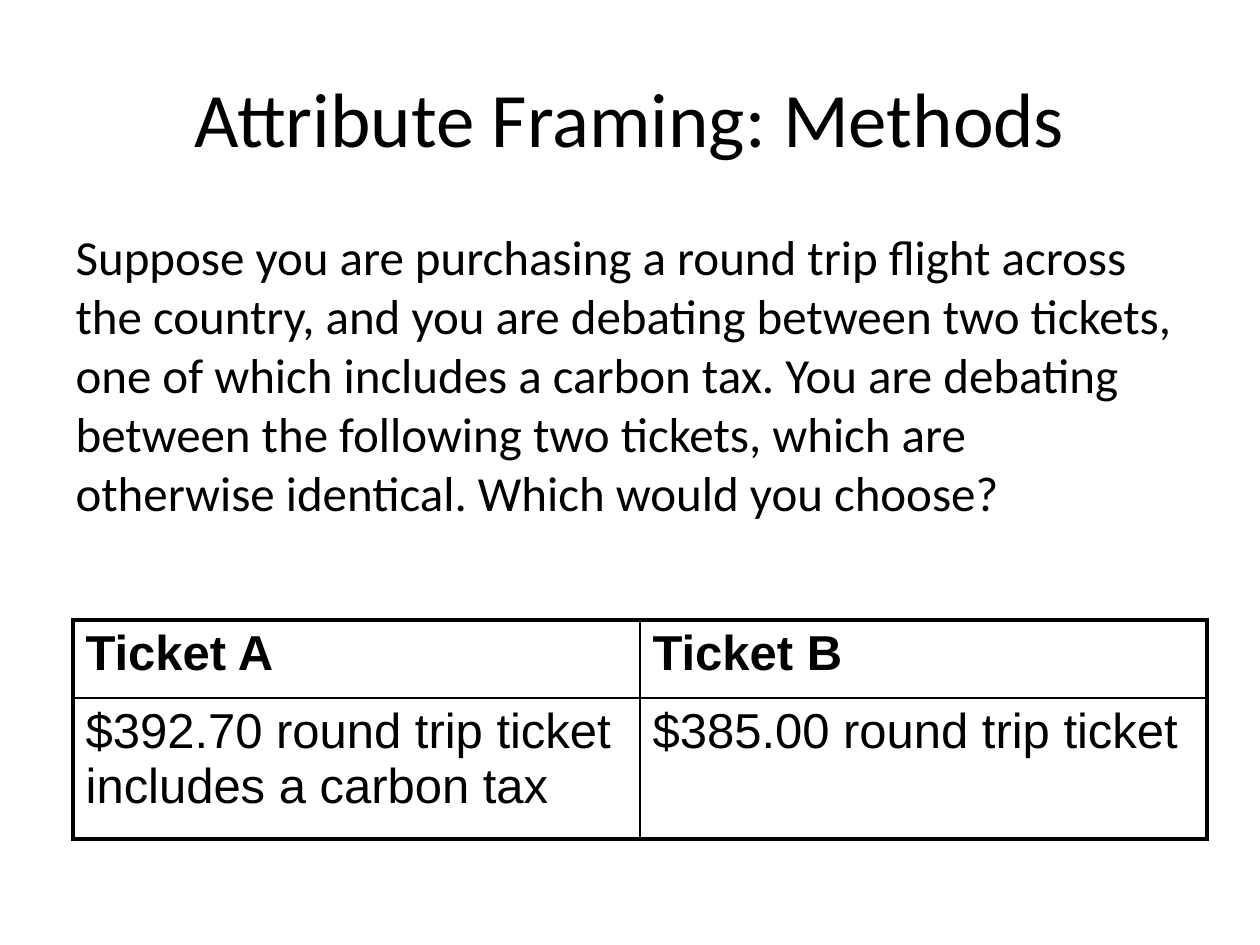
from dataclasses import dataclass

import pptx
import pptx.dml.color
import pptx.enum.text
import pptx.oxml
import pptx.oxml.ns
import pptx.util
from pptx.util import Pt


@dataclass(frozen=True)
class Theme:
    ink: str = "000000"
    heading_font: str = "Calibri"
    table_font: str = "Arial"
    title_size: float = 44
    text_size: float = 28
    space_before: float = 5.6
    outer_border: float = 2.25
    inner_border: float = 1


@dataclass(frozen=True)
class Box:
    left: float
    top: float
    width: float
    height: float


@dataclass(frozen=True)
class Ticket:
    name: str
    offer: tuple[str, ...]


THEME = Theme()
TITLE_BOX = Box(36, 21.6, 648, 90)
QUESTION_BOX = Box(36, 126, 642, 210)
TICKETS_BOX = Box(41.76, 354.24, 648, 125.28)
ROW_HEIGHTS = (44.64, 80.64)
QUESTION = (
    "Suppose you are purchasing a round trip flight across the country, "
    "and you are debating between two tickets, one of which includes a carbon tax. "
    "You are debating between the following two tickets, which are otherwise identical. "
    "Which would you choose?"
)
TICKETS = (
    Ticket("Ticket A", ("$392.70 round trip ticket", "includes a carbon tax")),
    Ticket("Ticket B", ("$385.00 round trip ticket",)),
)


def write_lines(paragraph, lines: tuple[str, ...], font_name: str, size: float, bold: bool = False) -> None:
    for index, line in enumerate(lines):
        if index:
            paragraph.add_line_break()
        run = paragraph.add_run()
        run.text = line
        run.font.name = font_name
        run.font.size = Pt(size)
        run.font.bold = bold
        run.font.color.rgb = pptx.dml.color.RGBColor.from_string(THEME.ink)


def place(placeholder, box: Box) -> None:
    placeholder.left, placeholder.top = Pt(box.left), Pt(box.top)
    placeholder.width, placeholder.height = Pt(box.width), Pt(box.height)
    placeholder.text_frame.word_wrap = True
    placeholder.text_frame.auto_size = pptx.enum.text.MSO_AUTO_SIZE.NONE


def add_title(slide) -> None:
    title = slide.shapes.title
    place(title, TITLE_BOX)
    title.text_frame.vertical_anchor = pptx.enum.text.MSO_ANCHOR.MIDDLE
    heading = title.text_frame.paragraphs[0]
    heading.alignment = pptx.enum.text.PP_ALIGN.CENTER
    write_lines(heading, ("Attribute Framing: Methods",), THEME.heading_font, THEME.title_size)


def add_question(slide) -> None:
    body = slide.placeholders[1]
    place(body, QUESTION_BOX)
    question = body.text_frame.paragraphs[0]
    question.space_before = Pt(THEME.space_before)
    properties = question._p.get_or_add_pPr()
    properties.set("marL", "0")
    properties.set("indent", "0")
    properties.append(pptx.oxml.parse_xml(f'<a:buNone {pptx.oxml.ns.nsdecls("a")}/>'))
    write_lines(question, (QUESTION,), THEME.heading_font, THEME.text_size)


def set_borders(cell, outer_sides: dict[str, bool]) -> None:
    properties = cell._tc.get_or_add_tcPr()
    for index, (side, is_outer) in enumerate(outer_sides.items()):
        width = Pt(THEME.outer_border if is_outer else THEME.inner_border)
        border = pptx.oxml.parse_xml(
            f'<a:ln{side} {pptx.oxml.ns.nsdecls("a")} w="{int(width)}">'
            f'<a:solidFill><a:srgbClr val="{THEME.ink}"/></a:solidFill>'
            f'<a:prstDash val="solid"/></a:ln{side}>'
        )
        properties.insert(index, border)


def add_tickets(slide, tickets: tuple[Ticket, ...]) -> None:
    box = TICKETS_BOX
    table = slide.shapes.add_table(
        len(ROW_HEIGHTS), len(tickets), Pt(box.left), Pt(box.top), Pt(box.width), Pt(box.height)
    ).table
    table.first_row = False
    table.horz_banding = False
    for row, height in zip(table.rows, ROW_HEIGHTS):
        row.height = Pt(height)
    for column, ticket in enumerate(tickets):
        table.columns[column].width = Pt(box.width / len(tickets))
        for row, lines in enumerate(((ticket.name,), ticket.offer)):
            cell = table.cell(row, column)
            cell.fill.background()
            set_borders(cell, {
                "L": column == 0,
                "R": column == len(tickets) - 1,
                "T": row == 0,
                "B": row == len(ROW_HEIGHTS) - 1,
            })
            entry = cell.text_frame.paragraphs[0]
            entry.space_before = Pt(THEME.space_before)
            write_lines(entry, lines, THEME.table_font, THEME.text_size, bold=row == 0)


def main() -> None:
    presentation = pptx.Presentation()
    presentation.slide_width, presentation.slide_height = Pt(720), Pt(540)
    slide = presentation.slides.add_slide(presentation.slide_layouts[1])
    add_title(slide)
    add_question(slide)
    add_tickets(slide, TICKETS)
    presentation.save("out.pptx")


if __name__ == "__main__":
    main()
